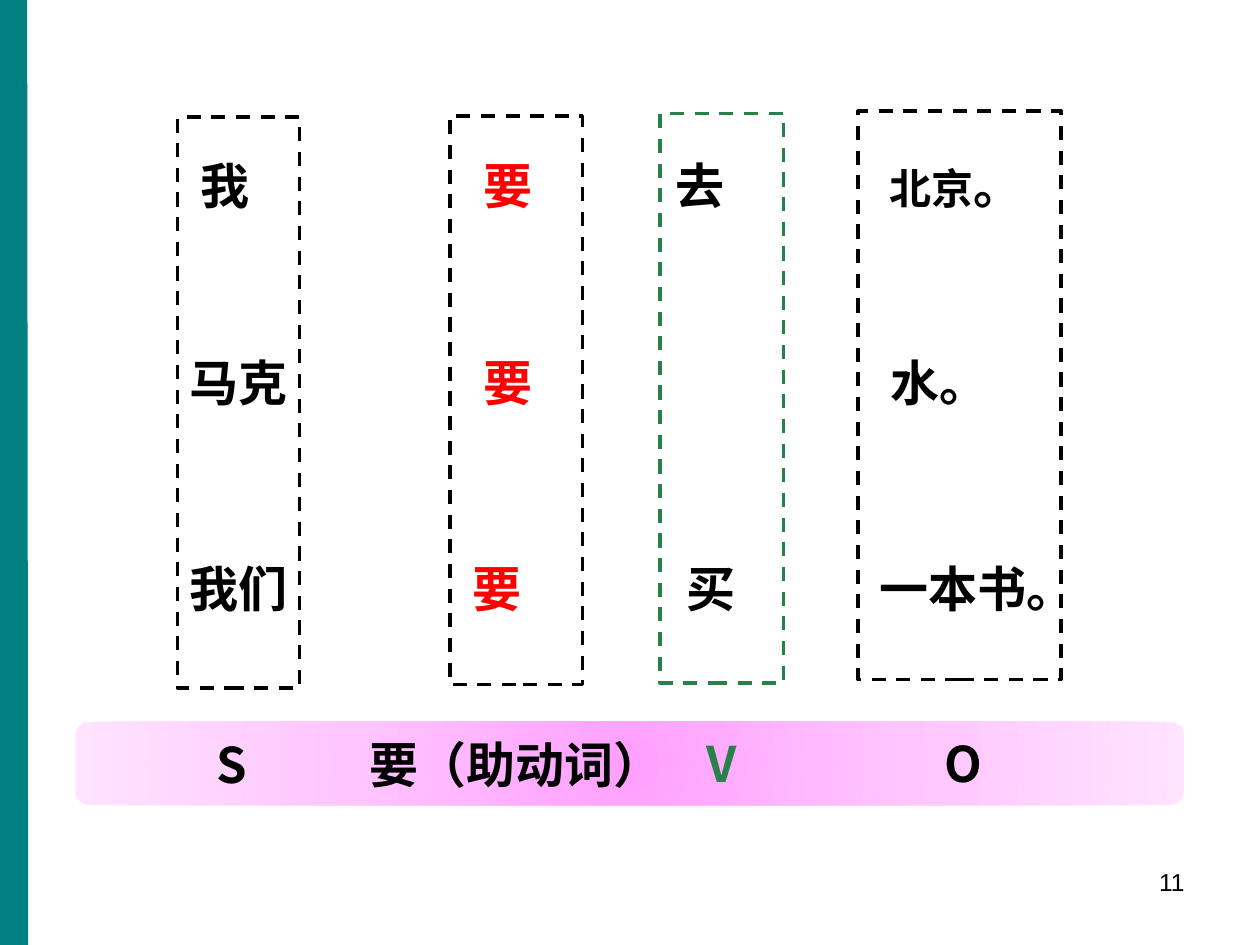
from lxml import etree
from pptx import Presentation
from pptx.dml.color import RGBColor
from pptx.enum.dml import MSO_LINE
from pptx.enum.shapes import MSO_CONNECTOR, MSO_SHAPE
from pptx.enum.text import MSO_ANCHOR, PP_ALIGN
from pptx.oxml import parse_xml
from pptx.oxml.ns import nsdecls, qn
from pptx.util import Cm, Pt

DASH = MSO_LINE.DASH
STRAIGHT = MSO_CONNECTOR.STRAIGHT
RECTANGLE, ROUNDED = MSO_SHAPE.RECTANGLE, MSO_SHAPE.ROUNDED_RECTANGLE
MIDDLE = MSO_ANCHOR.MIDDLE
LEFT, RIGHT = PP_ALIGN.LEFT, PP_ALIGN.RIGHT

COLORS = {"black": "000000", "red": "FF0000", "green": "288149", "teal": "008080"}
BAND_STOPS = [(0, "FFA0FF"), (50, "FFC5FF"), (100, "FFE3FF")]
LATIN, CHINESE = "Arial", "Noto Sans CJK SC"
PLAIN_TABLE = "{2D5ABB26-0587-4C30-8999-92F81FD0307C}"
COLUMN_WIDTHS = [1.93, 2.82, 2.87, 3.66, 4.55, 7.14]
CELL_MARGIN = 0.38
SUBJECT, MODAL, VERB, OBJECT = 1, 3, 4, 5


def write_text(paragraph, text, size=28, bold=True, color="black", font=LATIN, align=LEFT):
    """Append one formatted run to the paragraph."""
    paragraph.alignment = align
    run = paragraph.add_run()
    run.text = text
    run.font.size, run.font.bold, run.font.name = Pt(size), bold, font
    run.font.color.rgb = RGBColor.from_string(COLORS[color])
    east_asian = etree.SubElement(run.font._element, qn("a:ea"))
    east_asian.set("typeface", CHINESE)


class SlideBuilder:
    def __init__(self, slide):
        self.slide = slide

    def shape(self, kind, left, top, width, height):
        shape = self.slide.shapes.add_shape(kind, Cm(left), Cm(top), Cm(width), Cm(height))
        shape.shadow.inherit = False
        return shape

    def dashed_frame(self, left, top, width, height, color="black"):
        shape = self.shape(RECTANGLE, left, top, width, height)
        shape.fill.background()
        shape.line.color.rgb = RGBColor.from_string(COLORS[color])
        shape.line.width = Pt(2)
        shape.line.dash_style = DASH

    def gradient_band(self, left, top, width, height):
        shape = self.shape(ROUNDED, left, top, width, height)
        shape.line.fill.background()
        shape.fill.gradient()
        stops = "".join(
            f'<a:gs pos="{position * 1000}"><a:srgbClr val="{color}"/></a:gs>'
            for position, color in BAND_STOPS)
        gradient = parse_xml(
            f'<a:gradFill {nsdecls("a")} rotWithShape="1"><a:gsLst>{stops}</a:gsLst>'
            '<a:path path="circle"><a:fillToRect l="50000" t="50000" r="50000" b="50000"/>'
            '</a:path></a:gradFill>')
        properties = shape._element.spPr
        properties.replace(properties.find(qn("a:gradFill")), gradient)

    def table_row(self, top, height, entries):
        """Add a one-row table; entries map column to (indent, runs, color)."""
        frame = self.slide.shapes.add_table(
            1, len(COLUMN_WIDTHS), Cm(1.52), Cm(top), Cm(sum(COLUMN_WIDTHS)), Cm(height))
        table = frame.table
        table.first_row = table.horz_banding = False
        table._tbl.tblPr.find(qn("a:tableStyleId")).text = PLAIN_TABLE
        for index, width in enumerate(COLUMN_WIDTHS):
            table.columns[index].width = Cm(width)
            table.cell(0, index).fill.background()
        for column, (indent, runs, color) in entries.items():
            cell = table.cell(0, column)
            cell.vertical_anchor = MIDDLE
            cell.margin_left = Cm(CELL_MARGIN + indent)
            cell.margin_right = cell.margin_top = cell.margin_bottom = Cm(CELL_MARGIN)
            paragraph = cell.text_frame.paragraphs[0]
            paragraph.space_before = Pt(5.6)
            for text, size in runs:
                write_text(paragraph, text, size=size, color=color)

    def text_box(self, text, left, top, width, height, wrap=True, indent=0, **style):
        box = self.slide.shapes.add_textbox(Cm(left), Cm(top), Cm(width), Cm(height))
        box.text_frame.word_wrap = wrap
        box.text_frame.margin_left = Cm(0.25 + indent)
        write_text(box.text_frame.paragraphs[0], text, **style)

    def line(self, start, end, color, width):
        connector = self.slide.shapes.add_connector(
            STRAIGHT, Cm(start[0]), Cm(start[1]), Cm(end[0]), Cm(end[1]))
        connector.line.color.rgb = RGBColor.from_string(COLORS[color])
        connector.line.width = Pt(width)
        etree.SubElement(connector._element.spPr, qn("a:effectLst"))


def main():
    presentation = Presentation()
    presentation.slide_width, presentation.slide_height = Cm(25.4), Cm(19.05)
    builder = SlideBuilder(presentation.slides.add_slide(presentation.slide_layouts[6]))

    # Page number and the band behind the sentence pattern
    builder.text_box("11", 18.21, 17.35, 5.92, 1.32, size=14, bold=False, align=RIGHT)
    builder.gradient_band(1.52, 14.55, 22.35, 1.68)

    # Example sentences, with empty rows between them
    sentences = [
        {SUBJECT: (0.22, [("我", 28)], "black"),
         MODAL: (0.22, [("要", 28)], "red"),
         VERB: (0.44, [("去", 28)], "black"),
         OBJECT: (0.2, [("北京", 24), ("。", 28)], "black")},
        {},
        {SUBJECT: (0, [("马克", 28)], "black"),
         MODAL: (0.22, [("要", 28)], "red"),
         OBJECT: (0.22, [("水。", 28)], "black")},
        {},
        {SUBJECT: (0, [("我们", 28)], "black"),
         MODAL: (0, [("要", 28)], "red"),
         VERB: (0.66, [("买", 28)], "black"),
         OBJECT: (0, [("一本书。", 28)], "black")},
    ]
    for index, entries in enumerate(sentences):
        is_last = index == len(sentences) - 1
        builder.table_row(2.29 + 1.99 * index, 3.12 if is_last else 2.79, entries)

    # Dashed frames around the sentence parts
    builder.dashed_frame(3.58, 2.36, 2.46, 11.51)
    builder.dashed_frame(9.07, 2.34, 2.67, 11.46)
    builder.dashed_frame(13.31, 2.29, 2.49, 11.48, color="green")
    builder.dashed_frame(17.3, 2.24, 4.09, 11.46)

    # Sentence pattern
    builder.text_box("S", 3.89, 14.68, 1.42, 1.45, wrap=False, indent=0.22, font=CHINESE)
    builder.text_box("O", 18.8, 14.66, 1.32, 1.45, wrap=False, font=CHINESE)
    builder.text_box("V", 14, 14.66, 1.52, 1.45, wrap=False, color="green", font=CHINESE)
    builder.text_box("要（助动词）", 7.19, 14.68, 6.53, 1.45)

    # Bar along the left edge
    builder.line((0.25, 19.05), (0.23, -0.05), "teal", 18)

    presentation.save("out.pptx")


if __name__ == "__main__":
    main()
